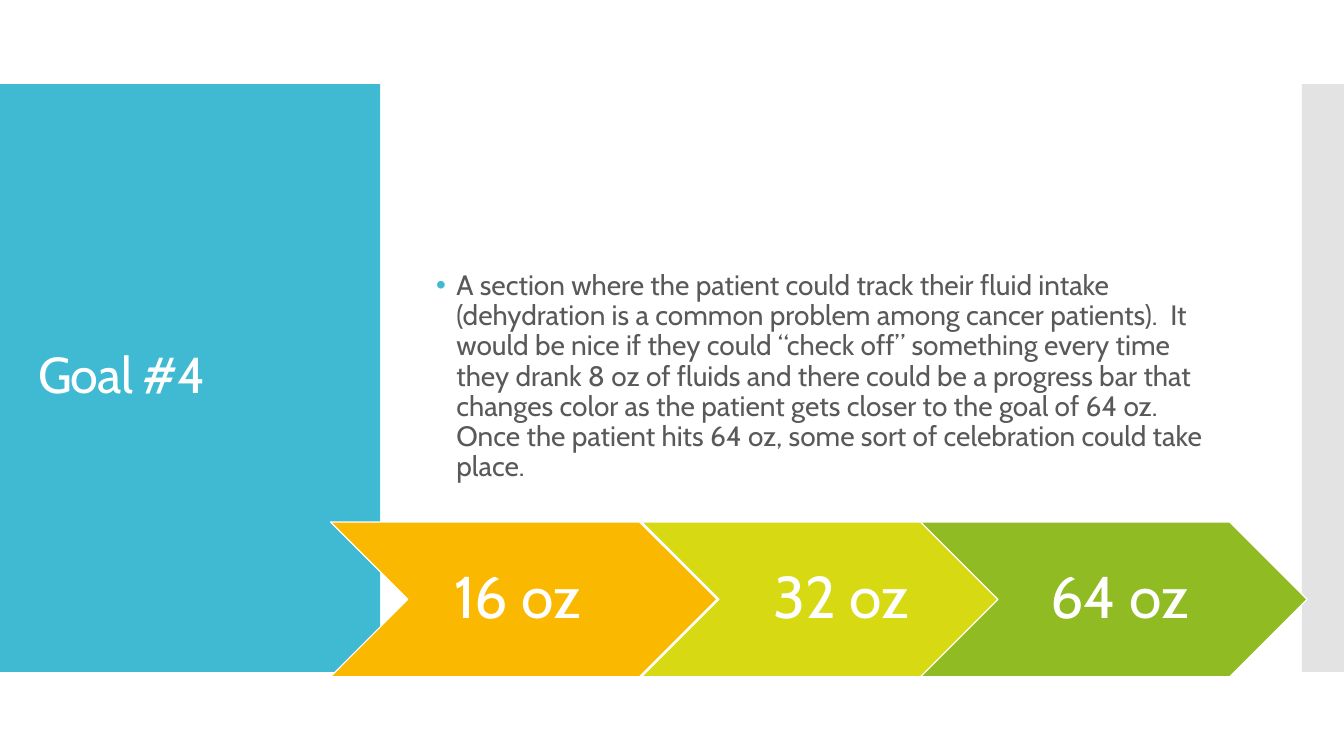
from lxml import etree
from pptx import Presentation
from pptx import util as u
from pptx.dml.color import RGBColor
from pptx.enum import shapes, text
from pptx.oxml.ns import qn

COLORS = {
    "panel": "40BAD2",
    "edge": "C8C8C8",
    "white": "FFFFFF",
    "body": "595959",
    "low": "FAB900",
    "middle": "D7D913",
    "full": "90BB23",
}
FONT = "Cabin"
CELL = u.Inches(7.5) / 18
ARROW_TOP, ARROW_WIDTH, ARROW_HEIGHT = 12.43, 9.2, 3.68
MILESTONES = [
    (7.87, "16 oz\t", "low"),
    (15.28, "32 oz", "middle"),
    (21.92, "64 oz", "full"),
]
GOAL = (
    "A section where the patient could track their fluid intake "
    "(dehydration is a common problem among cancer patients).  It would be "
    "nice if they could “check off” something every time they drank 8 oz of "
    "fluids and there could be a progress bar that changes color as the "
    "patient gets closer to the goal of 64 oz. Once the patient hits 64 oz, "
    "some sort of celebration could take place. "
)


def grid(*cells):
    return [u.Emu(round(cell * CELL)) for cell in cells]


def rgb(name):
    return RGBColor.from_string(COLORS[name])


def add_block(slide, preset, area, color, outline=None):
    block = slide.shapes.add_shape(preset, *grid(*area))
    block.shadow.inherit = False
    block.fill.solid()
    block.fill.fore_color.rgb = rgb(color)
    if outline:
        block.line.color.rgb = rgb(outline)
        block.line.width = u.Pt(0.85)
    else:
        block.line.fill.background()
    return block


def add_words(slide, area, words, size, color):
    frame = slide.shapes.add_textbox(*grid(*area)).text_frame
    frame.word_wrap = True
    frame.vertical_anchor = text.MSO_ANCHOR.MIDDLE
    paragraph = frame.paragraphs[0]
    paragraph.add_run().text = words
    paragraph.line_spacing = 0.9
    paragraph.font.name = FONT
    paragraph.font.size = u.Pt(size)
    paragraph.font.color.rgb = rgb(color)
    return frame


def add_bullet(paragraph, color):
    properties = paragraph._p.get_or_add_pPr()
    properties.set("marL", str(u.Inches(0.2)))
    properties.set("indent", str(u.Inches(-0.2)))
    tint = etree.Element(qn("a:buClr"))
    etree.SubElement(tint, qn("a:srgbClr"), val=COLORS[color])
    face = etree.Element(qn("a:buFont"), typeface="Arial")
    mark = etree.Element(qn("a:buChar"), char="•")
    place = properties.index(properties.find(qn("a:defRPr")))
    properties[place:place] = [tint, face, mark]


def add_milestone(slide, left, amount, color):
    area = (left, ARROW_TOP, ARROW_WIDTH, ARROW_HEIGHT)
    add_block(slide, shapes.MSO_SHAPE.CHEVRON, area, color, "white")
    inset = ARROW_HEIGHT / 2
    label_area = (left + inset, ARROW_TOP, ARROW_WIDTH - 2 * inset, ARROW_HEIGHT)
    label = add_words(slide, label_area, amount, 42, "white")
    label.margin_left = u.Inches(0.18)
    label.margin_top = label.margin_right = label.margin_bottom = u.Inches(0.06)
    label.paragraphs[0].alignment = text.PP_ALIGN.CENTER


def main():
    deck = Presentation()
    deck.slide_width, deck.slide_height = grid(32, 18)
    slide = deck.slides.add_slide(deck.slide_layouts[6])

    rectangle = shapes.MSO_SHAPE.RECTANGLE
    add_block(slide, rectangle, (0, 2, 9.05, 14), "panel")
    edge = add_block(slide, rectangle, (31, 2, 1, 14), "edge")
    edge_color = edge.fill._xPr.find(qn("a:solidFill"))[0]
    etree.SubElement(edge_color, qn("a:alpha"), val="50000")

    title = add_words(slide, (0.67, 2.95, 7.73, 12.07), "Goal #4", 36, "white")
    title.paragraphs[0].runs[0].font._element.set("spc", "-60")

    goal = add_words(slide, (10.15, 2.26, 19.2, 13.44), GOAL, 20, "body")
    goal.paragraphs[0].space_before = u.Pt(12)
    add_bullet(goal.paragraphs[0], "panel")

    for left, amount, color in MILESTONES:
        add_milestone(slide, left, amount, color)

    deck.save("out.pptx")


if __name__ == "__main__":
    main()
